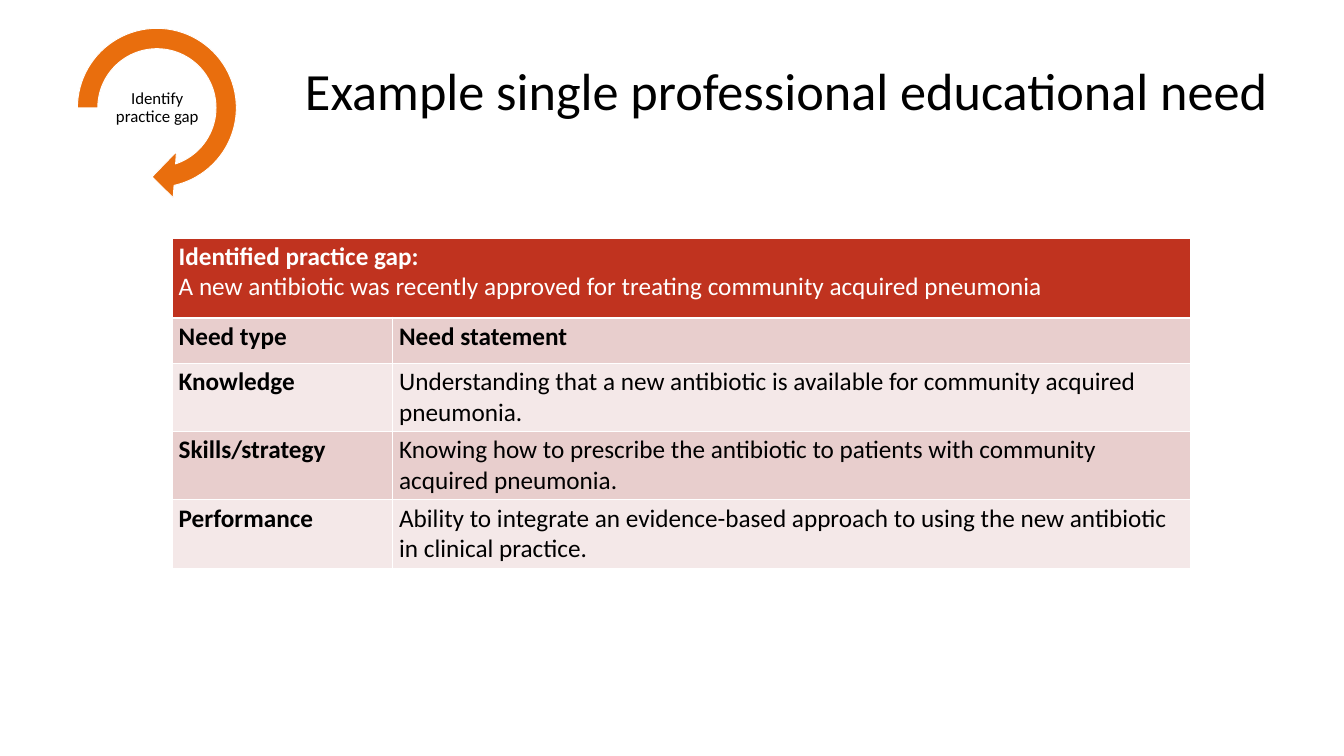
import pptx
import pptx.dml.color
import pptx.enum.shapes
import pptx.enum.text
import pptx.oxml
import pptx.oxml.ns
import pptx.util

TEXT = pptx.enum.text
MID = TEXT.MSO_ANCHOR.MIDDLE
MAIN = {"size": 56, "align": TEXT.PP_ALIGN.CENTER, "lead": 0.9}
NOTE = {**MAIN, "size": 18}
BODY = {"size": 27, "align": TEXT.PP_ALIGN.LEFT, "lead": 1.0}
DARK, LIGHT = "E8CECD", "F4E8E8"
NEEDS = [
    ("Need type", "Need statement"),
    ("Knowledge", "Understanding that a new antibiotic is available for community acquired pneumonia."),
    ("Skills/strategy", "Knowing how to prescribe the antibiotic to patients with community acquired pneumonia."),
    ("Performance", "Ability to integrate an evidence-based approach to using the new antibiotic in clinical practice."),
]


def tint(code):
    return pptx.dml.color.RGBColor.from_string(code)


class Deck:
    """Hold the style and current slide, with lengths in percent of its size."""

    def __init__(self, wide, high):
        self.file = pptx.Presentation()
        self.file.slide_width = pptx.util.Inches(wide)
        self.file.slide_height = pptx.util.Inches(high)
        self.slide = self.file.slides.add_slide(self.file.slide_layouts[5])

    def col(self, share):
        return round(self.file.slide_width * share / 100)

    def row(self, share):
        return round(self.file.slide_height * share / 100)

    def area(self, left, top, wide, high):
        return self.col(left), self.row(top), self.col(wide), self.row(high)

    def letter(self, frame, lines, look, color="000000"):
        for num, (words, bold) in enumerate(lines):
            para = frame.paragraphs[0] if num == 0 else frame.add_paragraph()
            para.alignment, para.line_spacing = look["align"], look["lead"]
            run = para.add_run()
            run.text = words
            form = {"name": "Calibri", "size": pptx.util.Pt(look["size"]), "bold": bold}
            for key, value in form.items():
                setattr(run.font, key, value)
            run.font.color.rgb = tint(color)

    def frame(self, frame, **form):
        form = {"word_wrap": True, "auto_size": TEXT.MSO_AUTO_SIZE.NONE,
                "vertical_anchor": MID, **form}
        for key, value in form.items():
            setattr(frame, key, value)

    def title(self, words, *spot):
        head = self.slide.shapes.title
        for key, value in zip(("left", "top", "width", "height"), self.area(*spot)):
            setattr(head, key, value)
        self.frame(head.text_frame)
        self.letter(head.text_frame, [(words, False)], MAIN)

    def arrow(self, color, bends, *spot):
        kind = pptx.enum.shapes.MSO_SHAPE.CIRCULAR_ARROW
        arc = self.slide.shapes.add_shape(kind, *self.area(*spot))
        for num, bend in enumerate(bends):
            arc.adjustments[num] = bend
        arc.shadow.inherit = False
        arc.fill.solid()
        arc.fill.fore_color.rgb = tint(color)
        arc.line.color.rgb = tint("FFFFFF")
        arc.line.width = pptx.util.Pt(1)

    def label(self, words, *spot):
        box = self.slide.shapes.add_textbox(*self.area(*spot)).text_frame
        pad = pptx.util.Inches(0.01)
        sides = ("left", "right", "top", "bottom")
        self.frame(box, **{f"margin_{side}": pad for side in sides})
        self.letter(box, [(words, False)], NOTE)

    def paint(self, cell, color, base=1):
        space = pptx.oxml.ns.nsdecls("a")
        for side, size in zip("LRTB", (1, 1, 1, base)):
            cell._tc.get_or_add_tcPr().append(pptx.oxml.parse_xml(
                f'<a:ln{side} {space} w="{size * 12700}"><a:solidFill>'
                f'<a:srgbClr val="FFFFFF"/></a:solidFill></a:ln{side}>'))
        cell.fill.solid()
        cell.fill.fore_color.rgb = tint(color)

    def table(self, head, needs, left, top, cols, rows):
        spot = self.area(left, top, sum(cols), sum(rows))
        grid = self.slide.shapes.add_table(len(rows), len(cols), *spot).table
        for part, share in zip(grid.columns, cols):
            part.width = self.col(share)
        for part, share in zip(grid.rows, rows):
            part.height = self.row(share)
        for num in range(len(cols)):
            self.paint(grid.cell(0, num), "C0331F", 3)
        grid.cell(0, 0).merge(grid.cell(0, len(cols) - 1))
        self.letter(grid.cell(0, 0).text_frame, head, BODY, "FFFFFF")
        for down, need in enumerate(needs, 1):
            for over, words in enumerate(need):
                cell = grid.cell(down, over)
                self.paint(cell, DARK if down % 2 else LIGHT)
                bold = over == 0 or down == 1
                self.letter(cell.text_frame, [(words, bold)], BODY)


def main():
    deck = Deck(20, 11.25)
    deck.title("Example single professional educational need", 18.35, 8.36, 80.35, 7.91)
    deck.arrow("E96E0D", (0.11, 11.42, 45, 108, 0.125), 4.8, 2.04, 13.75, 24.44)
    deck.label("Identify practice gap", 7.85, 10.84, 7.7, 6.84)
    head = [
        ("Identified practice gap:", True),
        ("A new antibiotic was recently approved for treating community acquired pneumonia", False),
    ]
    deck.table(head, NEEDS, 12.8, 31.47, (16.4, 59.4), [10.58] + [6.04] * len(NEEDS))
    deck.file.save("out.pptx")


if __name__ == "__main__":
    main()
